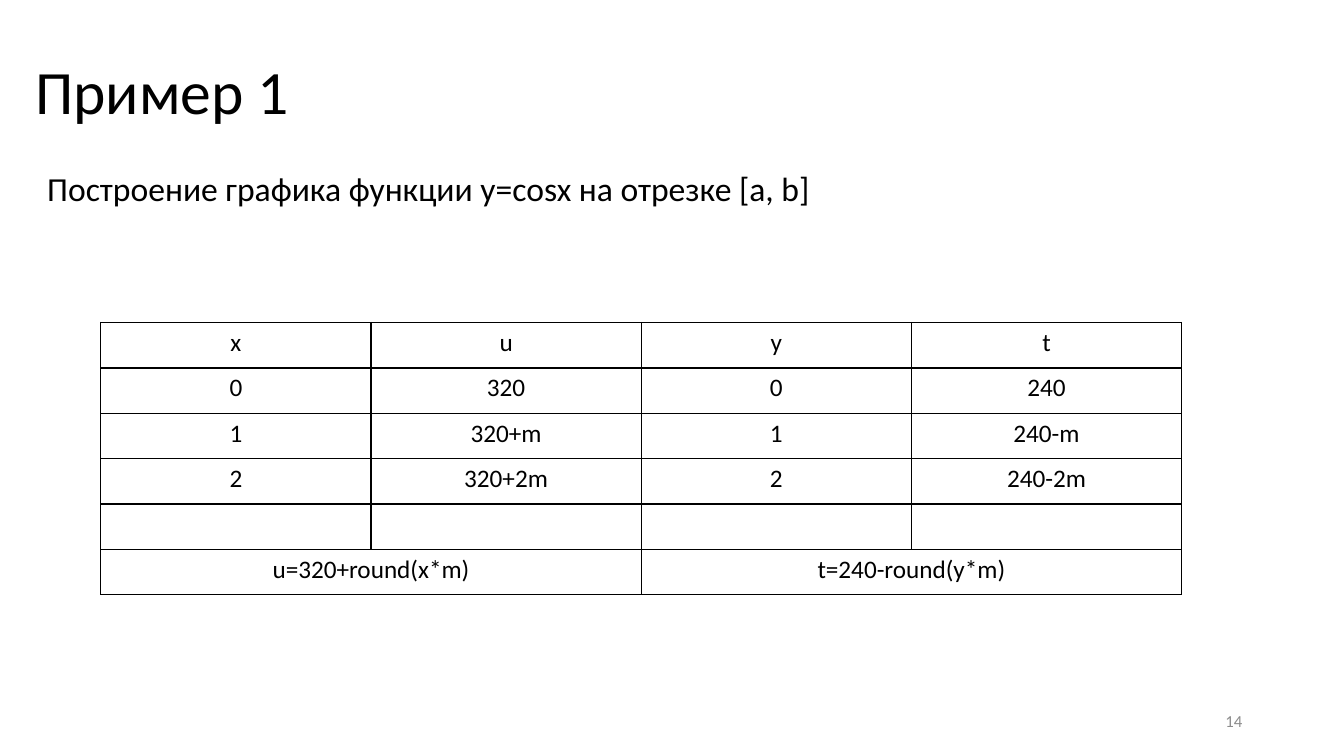
from dataclasses import dataclass

import lxml.etree
import pptx
import pptx.dml.color
import pptx.enum.text
import pptx.oxml.ns
import pptx.util

Inches = pptx.util.Inches
Align = pptx.enum.text.PP_ALIGN
Anchor = pptx.enum.text.MSO_ANCHOR

BLACK = pptx.dml.color.RGBColor(0x00, 0x00, 0x00)
GRAY = pptx.dml.color.RGBColor(0x8C, 0x8C, 0x8C)
FONT = "Calibri"

TABLE_LEFT, TABLE_TOP = 1, 3.2
COLUMN_WIDTH, ROW_HEIGHT = 2.68, 0.45
BORDER_WIDTH = pptx.util.Pt(1)
ROWS = [
    ["x", "u", "y", "t"],
    ["0", "320", "0", "240"],
    ["1", "320+m", "1", "240-m"],
    ["2", "320+2m", "2", "240-2m"],
    ["", "", "", ""],
    ["u=320+round(x*m)", "", "t=240-round(y*m)", ""],
]


@dataclass
class Label:
    text: str
    left: float
    top: float
    width: float
    height: float
    size: int
    color: pptx.dml.color.RGBColor = BLACK
    align: Align = Align.LEFT
    anchor: Anchor = Anchor.MIDDLE
    line_spacing: float = 1.0


LABELS = [
    Label("Пример 1", 0.25, 0.21, 13.08, 1.45, 44, line_spacing=0.9),
    Label("Построение графика функции y=cosx на отрезке [a, b]",
          0.37, 1.62, 11.34, 0.5, 24, anchor=Anchor.TOP),
    Label("14", 9.42, 6.95, 3, 0.4, 12, GRAY, Align.RIGHT),
]


def add_run(paragraph, text: str, size: int, color: pptx.dml.color.RGBColor) -> None:
    run = paragraph.add_run()
    run.text = text
    run.font.name = FONT
    run.font.size = pptx.util.Pt(size)
    run.font.color.rgb = color


def add_label(slide, label: Label) -> None:
    shape = slide.shapes.add_textbox(Inches(label.left), Inches(label.top),
                                     Inches(label.width), Inches(label.height))
    shape.text_frame.word_wrap = True
    shape.text_frame.vertical_anchor = label.anchor
    paragraph = shape.text_frame.paragraphs[0]
    paragraph.alignment = label.align
    paragraph.line_spacing = label.line_spacing
    add_run(paragraph, label.text, label.size, label.color)


def add_borders(cell) -> None:
    qualified = pptx.oxml.ns.qn
    properties = cell._tc.get_or_add_tcPr()
    for index, side in enumerate(("lnL", "lnR", "lnT", "lnB")):
        line = lxml.etree.Element(qualified(f"a:{side}"), w=str(int(BORDER_WIDTH)))
        fill = lxml.etree.SubElement(line, qualified("a:solidFill"))
        lxml.etree.SubElement(fill, qualified("a:srgbClr"), val=str(BLACK))
        properties.insert(index, line)


def add_value_table(slide) -> None:
    row_count, column_count = len(ROWS), len(ROWS[0])
    table = slide.shapes.add_table(
        row_count, column_count, Inches(TABLE_LEFT), Inches(TABLE_TOP),
        Inches(COLUMN_WIDTH * column_count), Inches(ROW_HEIGHT * row_count)).table
    table.first_row = False
    table.horz_banding = False
    for row_index, row in enumerate(ROWS):
        for column_index, text in enumerate(row):
            cell = table.cell(row_index, column_index)
            cell.fill.background()
            add_borders(cell)
            if text:
                paragraph = cell.text_frame.paragraphs[0]
                paragraph.alignment = Align.CENTER
                add_run(paragraph, text, 18, BLACK)
    last_row = row_count - 1
    for column_index in range(0, column_count, 2):
        table.cell(last_row, column_index).merge(table.cell(last_row, column_index + 1))


def main() -> None:
    presentation = pptx.Presentation()
    presentation.slide_width = Inches(13.33)
    presentation.slide_height = Inches(7.5)
    slide = presentation.slides.add_slide(presentation.slide_layouts[6])
    for label in LABELS:
        add_label(slide, label)
    add_value_table(slide)
    presentation.save("out.pptx")


if __name__ == "__main__":
    main()
